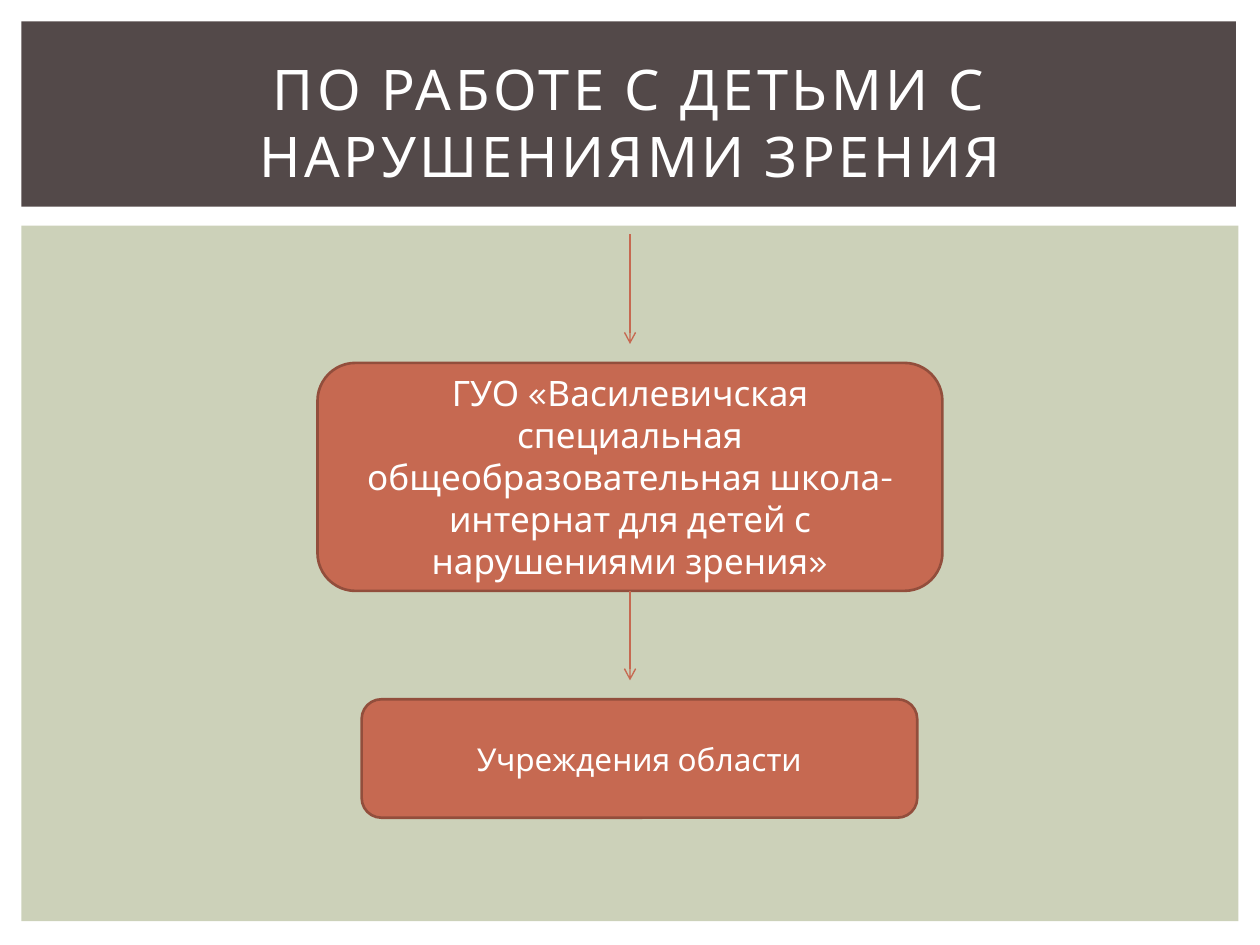
from lxml import etree
from pptx import Presentation
from pptx.dml.color import RGBColor
from pptx.enum.shapes import MSO_CONNECTOR, MSO_SHAPE
from pptx.enum.text import MSO_ANCHOR, PP_ALIGN
from pptx.oxml.ns import qn
from pptx.util import Inches, Pt

WHITE = RGBColor(0xFF, 0xFF, 0xFF)
SAGE = RGBColor(0xCC, 0xD1, 0xB9)
BROWN = RGBColor(0x53, 0x49, 0x49)
TERRACOTTA = RGBColor(0xC6, 0x69, 0x51)
RUST = RGBColor(0x92, 0x4E, 0x3C)


def write_centred(shape, text, size):
    frame = shape.text_frame
    frame.word_wrap = True
    frame.vertical_anchor = MSO_ANCHOR.MIDDLE
    paragraph = frame.paragraphs[0]
    paragraph.alignment = PP_ALIGN.CENTER
    run = paragraph.add_run()
    run.text = text
    for name, value in {"name": "Karla", "size": Pt(size)}.items():
        setattr(run.font, name, value)
    run.font.color.rgb = WHITE
    return run


prs = Presentation()
prs.slide_width, prs.slide_height = Inches(10), Inches(7.5)
slide = prs.slides.add_slide(prs.slide_layouts[6])
shapes = slide.shapes

# Background panels
for left, top, width, height, color in [
    (0.17, 1.79, 9.66, 5.52, SAGE),
    (0.17, 0.17, 9.64, 1.47, BROWN),
]:
    panel = shapes.add_shape(
        MSO_SHAPE.RECTANGLE, Inches(left), Inches(top), Inches(width), Inches(height)
    )
    panel.shadow.inherit = False
    panel.fill.solid()
    panel.fill.fore_color.rgb = color
    panel.line.fill.background()

# Title
title = shapes.add_textbox(Inches(0.42), Inches(0.39), Inches(9.17), Inches(1.15))
heading = write_centred(title, "ПО РАБОТЕ С ДЕТЬМИ С НАРУШЕНИЯМИ ЗРЕНИЯ", 32)
heading.font._element.set("spc", "200")

# Institutions
institutions = []
for left, top, width, height, text, size in [
    (2.52, 2.88, 4.96, 1.81,
     "ГУО «Василевичская специальная общеобразовательная школа-интернат "
     "для детей с нарушениями зрения»", 20),
    (2.87, 5.55, 4.41, 0.94, "Учреждения области", 18),
]:
    institution = shapes.add_shape(
        MSO_SHAPE.ROUNDED_RECTANGLE,
        Inches(left), Inches(top), Inches(width), Inches(height),
    )
    institution.shadow.inherit = False
    institution.fill.solid()
    institution.fill.fore_color.rgb = TERRACOTTA
    institution.line.color.rgb = RUST
    institution.line.width = Pt(1.5)
    write_centred(institution, text, size)
    institutions.append(institution)

school = institutions[0]

# Downward arrows; the second one leaves the school
for start, end, source in [(1.86, 2.73, None), (4.69, 5.4, school)]:
    arrow = shapes.add_connector(
        MSO_CONNECTOR.STRAIGHT, Inches(5), Inches(start), Inches(5), Inches(end)
    )
    if source is not None:
        arrow.begin_connect(source, 2)
    arrow.line.color.rgb = TERRACOTTA
    arrow.line.width = Pt(0.79)
    etree.SubElement(arrow.line._get_or_add_ln(), qn("a:tailEnd"), type="arrow")
    etree.SubElement(arrow._element.spPr, qn("a:effectLst"))

prs.save("out.pptx")
